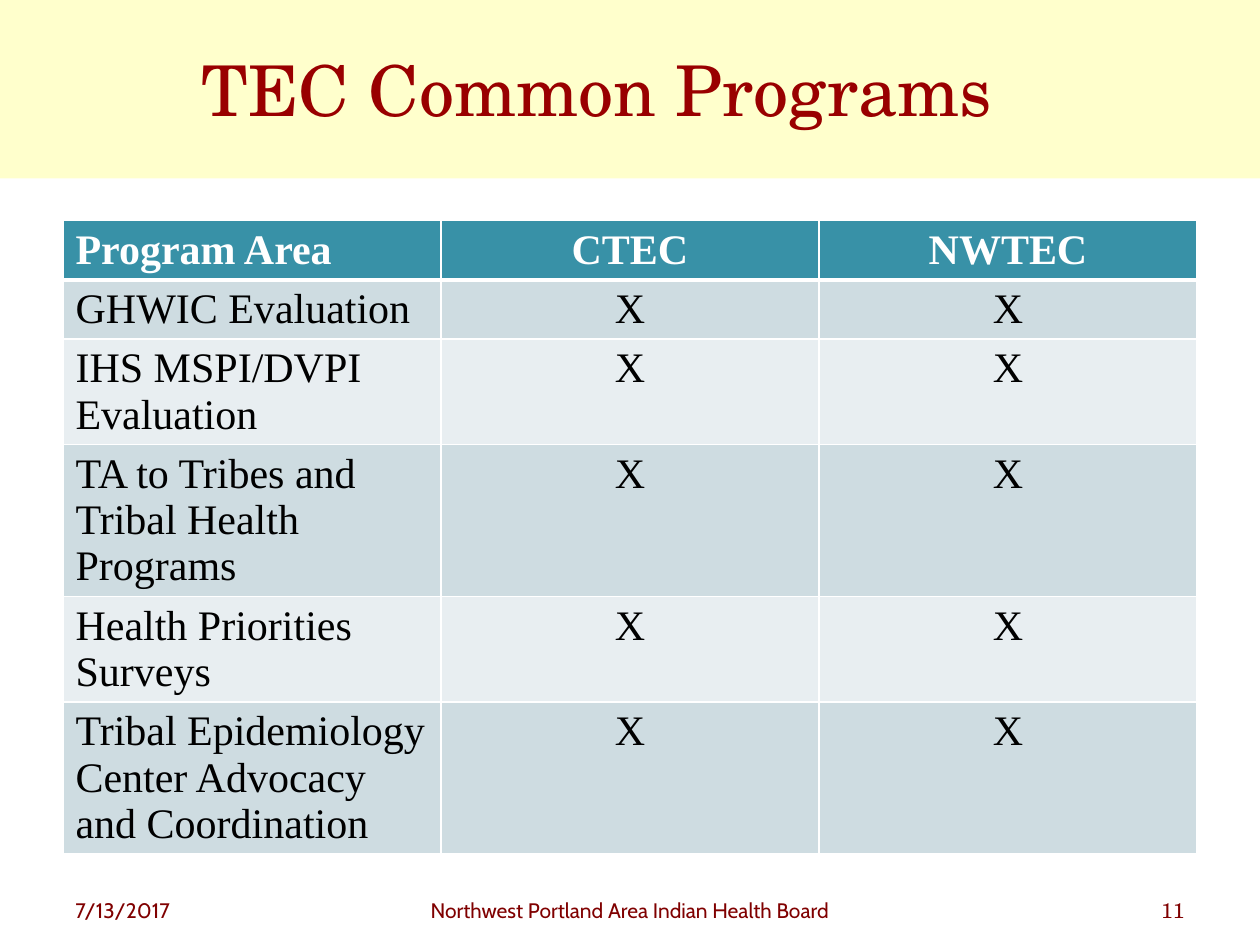
"""Build the TEC Common Programs slide with its comparison table."""
from dataclasses import dataclass

from lxml.etree import SubElement
from pptx import Presentation
from pptx.dml.color import RGBColor as RGB
from pptx.enum.shapes import MSO_SHAPE as SHAPE
from pptx.enum.text import MSO_ANCHOR as ANCHOR, PP_ALIGN as ALIGN
from pptx.oxml.ns import qn
from pptx.util import Cm, Pt


@dataclass(frozen=True)
class Theme:
    band: str = "FFFFCC"
    title: str = "990000"
    footer: str = "800000"
    header: str = "3891A7"
    stripes: tuple = ("CEDCE1", "E8EEF1")
    white: str = "FFFFFF"
    black: str = "000000"
    display_font: str = "TeX Gyre Schola"
    footer_font: str = "Cabin"
    table_font: str = "Times New Roman"
    title_size: int = 40
    table_size: int = 24
    footer_size: int = 12


def style(p, font, size, color, align=ALIGN.LEFT, bold=False):
    p.alignment = align
    p.font.name, p.font.size, p.font.bold = font, Pt(size), bold
    p.font.color.rgb = RGB.from_string(color)


def add_border(cell, side, width):
    ln = SubElement(cell._tc.get_or_add_tcPr(), qn(f"a:ln{side}"), w=str(Pt(width)))
    fill = SubElement(ln, qn("a:solidFill"))
    SubElement(fill, qn("a:srgbClr"), val=theme.white)


theme = Theme()
prs = Presentation()
prs.slide_width, prs.slide_height = Cm(25.4), Cm(19.05)
s = prs.slides.add_slide(prs.slide_layouts[5])

band = s.shapes.add_shape(SHAPE.RECTANGLE, 0, 0, prs.slide_width, Cm(3.6))
band.shadow.inherit = False
band.fill.solid()
band.fill.fore_color.rgb = RGB.from_string(theme.band)
band.line.fill.background()
s.shapes._spTree.insert(2, band._element)

title = s.shapes.title
title.left, title.top, title.width, title.height = Cm(3.81), Cm(0.2), Cm(16.71), Cm(3.18)
tf = title.text_frame
tf.text = "TEC Common Programs"
tf.vertical_anchor = ANCHOR.MIDDLE
style(tf.paragraphs[0], theme.display_font, theme.title_size, theme.title)

programs = [
    "GHWIC Evaluation",
    "IHS MSPI/DVPI Evaluation",
    "TA to Tribes and Tribal Health Programs",
    "Health Priorities Surveys",
    "Tribal Epidemiology Center Advocacy and Coordination",
]
rows = [("Program Area", "CTEC", "NWTEC")] + [(name, "X", "X") for name in programs]
row_height = Cm(1.04)
table = s.shapes.add_table(len(rows), 3, Cm(1.27), Cm(4.45), Cm(22.86), row_height * len(rows)).table

for i, row in enumerate(rows):
    is_header = i == 0
    fill = theme.header if is_header else theme.stripes[(i - 1) % 2]
    color = theme.white if is_header else theme.black
    for j, text in enumerate(row):
        cell = table.cell(i, j)
        cell.text = text
        align = ALIGN.CENTER if j else ALIGN.LEFT
        style(cell.text_frame.paragraphs[0], theme.table_font, theme.table_size, color, align, is_header)
        for side in "LRTB":
            under_header = (i, side) in ((0, "B"), (1, "T"))
            add_border(cell, side, 3 if under_header else 1)
        cell.fill.solid()
        cell.fill.fore_color.rgb = RGB.from_string(fill)

footers = [
    ("7/13/2017", 1.27, 5.93, theme.footer_font, ALIGN.LEFT),
    ("Northwest Portland Area Indian Health Board", 7.41, 10.58, theme.footer_font, ALIGN.CENTER),
    ("11", 18.2, 5.93, theme.display_font, ALIGN.RIGHT),
]
for text, left, width, font, align in footers:
    tf = s.shapes.add_textbox(Cm(left), Cm(17.96), Cm(width), Cm(1.09)).text_frame
    tf.word_wrap = True
    tf.text = text
    style(tf.paragraphs[0], font, theme.footer_size, theme.footer, align)

prs.save("out.pptx")
